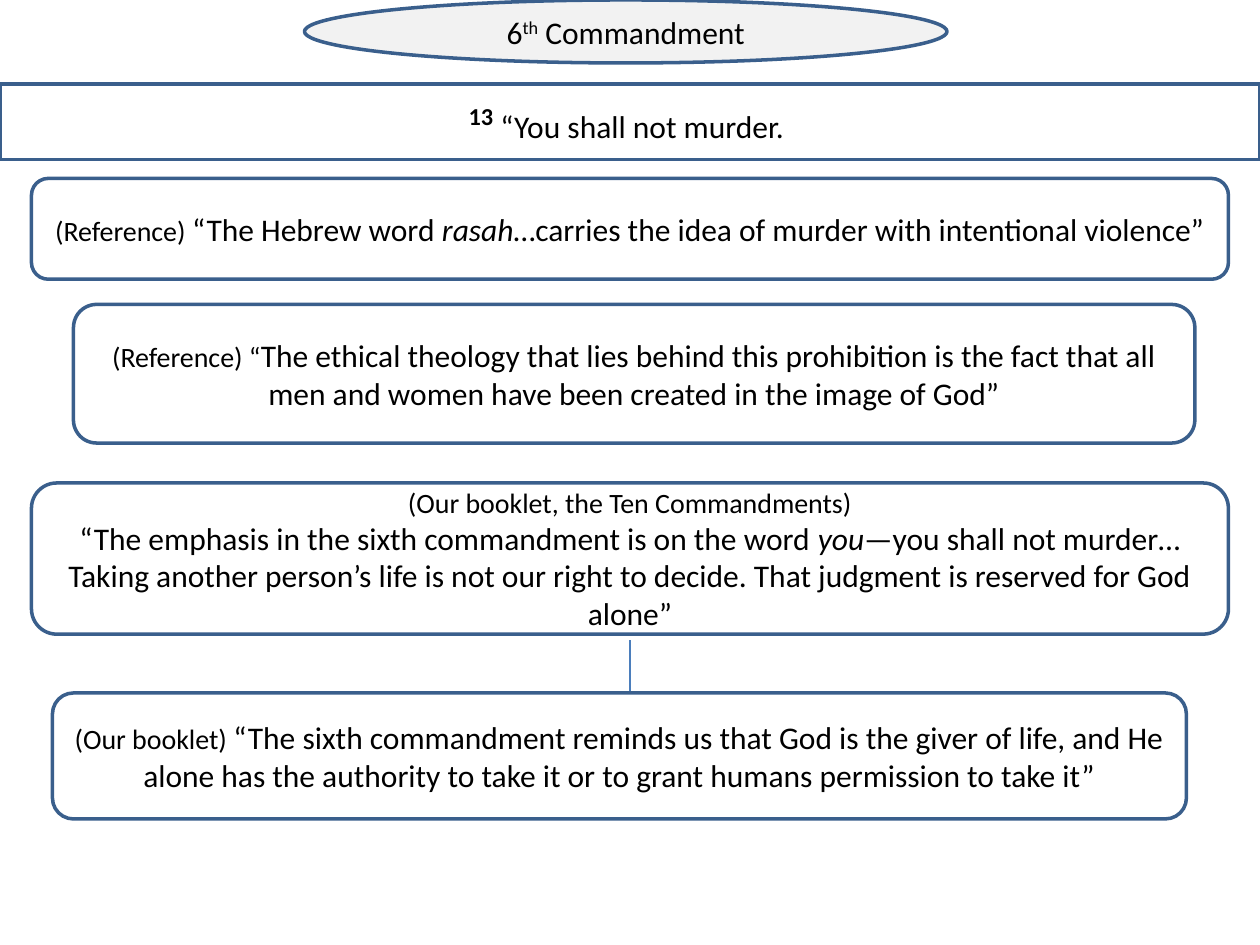
"""Build the slide on the sixth commandment with its supporting quotations."""
import pptx
import pptx.dml.color
import pptx.enum.shapes
import pptx.enum.text
import pptx.oxml.ns
import pptx.util
import lxml.etree

CELL = pptx.util.Inches(1) / 12
SHAPES = pptx.enum.shapes.MSO_SHAPE
PLAIN, SOURCE, VERSE = 18, 16, 24


def cells(count):
    return pptx.util.Emu(round(count * CELL))


def color(value):
    return pptx.dml.color.RGBColor.from_string(value)


deck = pptx.Presentation()
deck.slide_width = cells(120)
deck.slide_height = cells(90)
slide = deck.slides.add_slide(deck.slide_layouts[6])

statements = [
    (SHAPES.RECTANGLE, (0, 8, 120, 7.2), "FFFFFF", [
        [("13", VERSE, "bold super"), (" “You shall not murder. ", PLAIN, "")]]),
    (SHAPES.ROUNDED_RECTANGLE, (3, 46, 114, 14.4), "FFFFFF", [
        [("(Our booklet, the Ten Commandments)", SOURCE, "")],
        [("“The emphasis in the sixth commandment is on the word ", PLAIN, ""),
         ("you", PLAIN, "italic"),
         ("—you shall not murder…Taking another person’s life is not our right to decide. "
          "That judgment is reserved for God alone”", PLAIN, "")]]),
    (SHAPES.ROUNDED_RECTANGLE, (5, 66, 108, 12), "FFFFFF", [
        [("(Our booklet) ", SOURCE, ""),
         ("“The sixth commandment reminds us that God is the giver of life, and He alone "
          "has the authority to take it or to grant humans permission to take it”", PLAIN, "")]]),
    (SHAPES.ROUNDED_RECTANGLE, (3, 17, 114, 9.6), "FFFFFF", [
        [("(Reference) ", SOURCE, ""),
         ("“The Hebrew word ", PLAIN, ""),
         ("rasah", PLAIN, "italic"),
         ("…carries the idea of murder with intentional violence”", PLAIN, "")]]),
    (SHAPES.ROUNDED_RECTANGLE, (7, 29, 106.8, 13.2), "FFFFFF", [
        [("(Reference) “", SOURCE, ""),
         ("The ethical theology that lies behind this prohibition is the fact that all men "
          "and women have been created in the image of God”", PLAIN, "")]]),
    (SHAPES.OVAL, (29, 0, 61.2, 6), "F2F2F2", [
        [("6", PLAIN, ""), ("th", PLAIN, "super"), (" Commandment", PLAIN, "")]]),
]

for outline, place, fill, paragraphs in statements:
    statement = slide.shapes.add_shape(outline, *map(cells, place))
    statement.shadow.inherit = False
    statement.fill.solid()
    statement.fill.fore_color.rgb = color(fill)
    statement.line.color.rgb = color("3A5F8C")
    statement.line.width = pptx.util.Pt(2)
    wording = statement.text_frame
    wording.word_wrap = True
    wording.vertical_anchor = pptx.enum.text.MSO_ANCHOR.MIDDLE
    for index, runs in enumerate(paragraphs):
        paragraph = wording.add_paragraph() if index else wording.paragraphs[0]
        paragraph.alignment = pptx.enum.text.PP_ALIGN.CENTER
        for text, size, style in runs:
            run = paragraph.add_run()
            run.text = text
            run.font.name = "Calibri"
            run.font.size = pptx.util.Pt(size)
            run.font.color.rgb = color("000000")
            run.font.bold = "bold" in style
            run.font.italic = "italic" in style
            if "super" in style:
                run.font._element.set("baseline", "30000")

booklet_link = slide.shapes.add_connector(
    pptx.enum.shapes.MSO_CONNECTOR.STRAIGHT, cells(60), cells(61), cells(60), cells(65.8))
booklet_link.line.color.rgb = color("4B7EBC")
booklet_link.line.width = pptx.util.Pt(0.75)
lxml.etree.SubElement(booklet_link._element.spPr, pptx.oxml.ns.qn("a:effectLst"))

deck.save("out.pptx")
